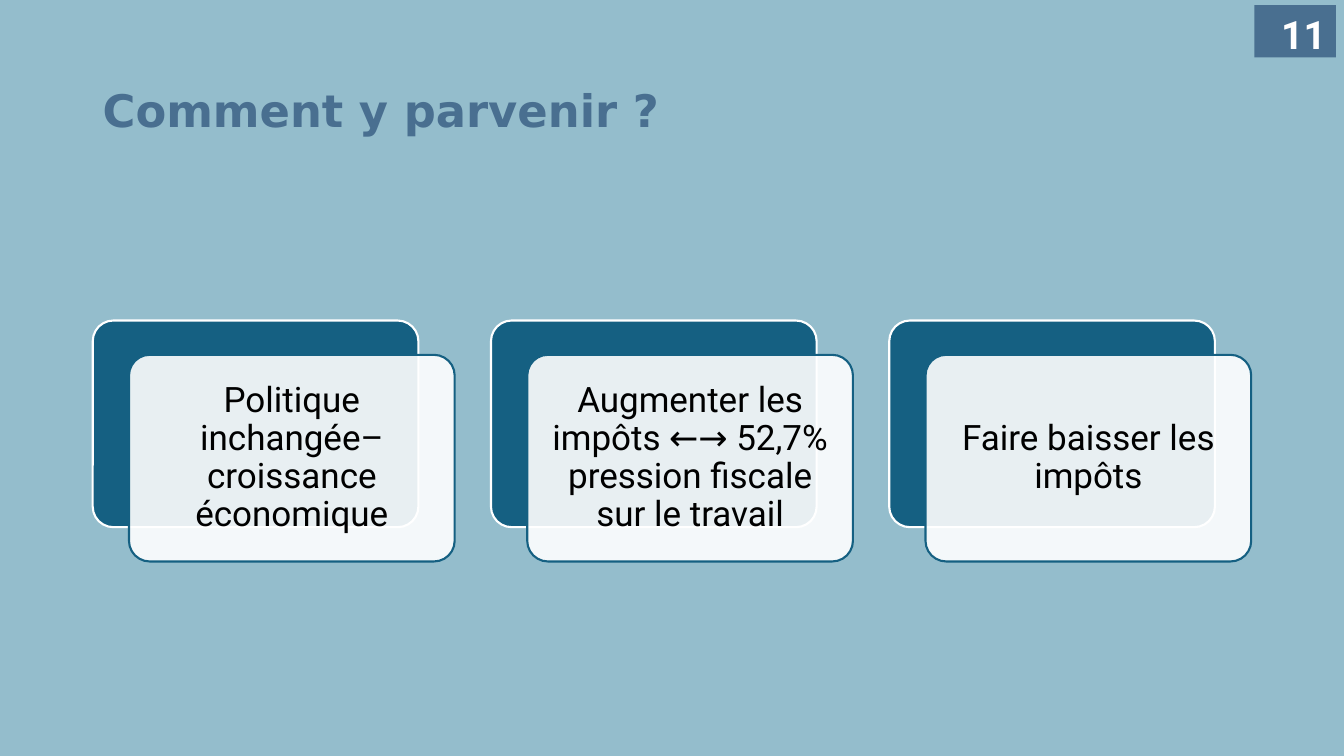
from lxml import etree
from pptx import Presentation
from pptx.dml.color import RGBColor
from pptx.enum.shapes import MSO_SHAPE
from pptx.enum.text import MSO_ANCHOR, PP_ALIGN
from pptx.oxml.ns import qn
from pptx.util import Inches, Pt

RECTANGLE, ROUNDED = MSO_SHAPE.RECTANGLE, MSO_SHAPE.ROUNDED_RECTANGLE
TOP, MIDDLE = MSO_ANCHOR.TOP, MSO_ANCHOR.MIDDLE
LEFT, CENTER, RIGHT = PP_ALIGN.LEFT, PP_ALIGN.CENTER, PP_ALIGN.RIGHT

COLORS = {
    "background": "94BDCC",
    "slate": "496F90",
    "petrol": "156082",
    "white": "FFFFFF",
    "black": "000000",
}
HEADING_FONT, BODY_FONT = "DejaVu Sans", "Roboto"

OPTIONS = [
    "Politique inchangée– croissance économique",
    "Augmenter les impôts ←→ 52,7% pression fiscale sur le travail",
    "Faire baisser les impôts",
]
CARD_LEFT, CARD_TOP, CARD_PITCH = 0.92, 3.18, 3.95
CARD_WIDTH, CARD_HEIGHT = 3.23, 2.05
FRONT_DX, FRONT_DY = 0.36, 0.34


def rgb(name):
    return RGBColor.from_string(COLORS[name])


def write(shape, text, font, size, color, align, anchor, bold=False, spacing=1.0):
    frame = shape.text_frame
    frame.word_wrap = True
    frame.vertical_anchor = anchor
    paragraph = frame.paragraphs[0]
    paragraph.alignment = align
    paragraph.line_spacing = spacing
    run = paragraph.add_run()
    run.text = text
    run.font.name = font
    run.font.size = Pt(size)
    run.font.bold = bold
    run.font.color.rgb = rgb(color)


def add_panel(slide, kind, left, top, width, height, fill, line=None, opacity=100):
    panel = slide.shapes.add_shape(
        kind, Inches(left), Inches(top), Inches(width), Inches(height))
    panel.shadow.inherit = False
    panel.fill.solid()
    panel.fill.fore_color.rgb = rgb(fill)
    if opacity < 100:
        color = panel.fill._xPr.find(qn("a:solidFill"))[0]
        etree.SubElement(color, qn("a:alpha"), val=str(opacity * 1000))
    if line:
        panel.line.color.rgb = rgb(line)
        panel.line.width = Pt(1.5)
    else:
        panel.line.fill.background()
    if kind == ROUNDED:
        panel.adjustments[0] = 0.1
    return panel


def add_option(slide, left, text):
    add_panel(slide, ROUNDED, left, CARD_TOP, CARD_WIDTH, CARD_HEIGHT,
              "petrol", "white")
    front = add_panel(slide, ROUNDED, left + FRONT_DX, CARD_TOP + FRONT_DY,
                      CARD_WIDTH, CARD_HEIGHT, "white", "petrol", opacity=90)
    front.text_frame.margin_top = front.text_frame.margin_bottom = Inches(0.1)
    write(front, text, BODY_FONT, 25, "black", CENTER, MIDDLE, spacing=0.9)


def main():
    prs = Presentation()
    prs.slide_width, prs.slide_height = Inches(13.33), Inches(7.5)
    slide = prs.slides.add_slide(prs.slide_layouts[6])
    slide.background.fill.solid()
    slide.background.fill.fore_color.rgb = rgb("background")

    # Title
    title = slide.shapes.add_textbox(
        Inches(0.92), Inches(0.4), Inches(11.5), Inches(1.45))
    write(title, "Comment y parvenir ?", HEADING_FONT, 32, "slate",
          LEFT, MIDDLE, bold=True, spacing=0.9)

    # Three policy options
    for index, text in enumerate(OPTIONS):
        add_option(slide, CARD_LEFT + index * CARD_PITCH, text)

    # Page number
    page_number = add_panel(slide, RECTANGLE, 12.44, 0.05, 0.81, 0.52, "slate")
    write(page_number, "11", BODY_FONT, 28, "white", RIGHT, TOP, bold=True)

    prs.save("out.pptx")


if __name__ == "__main__":
    main()
